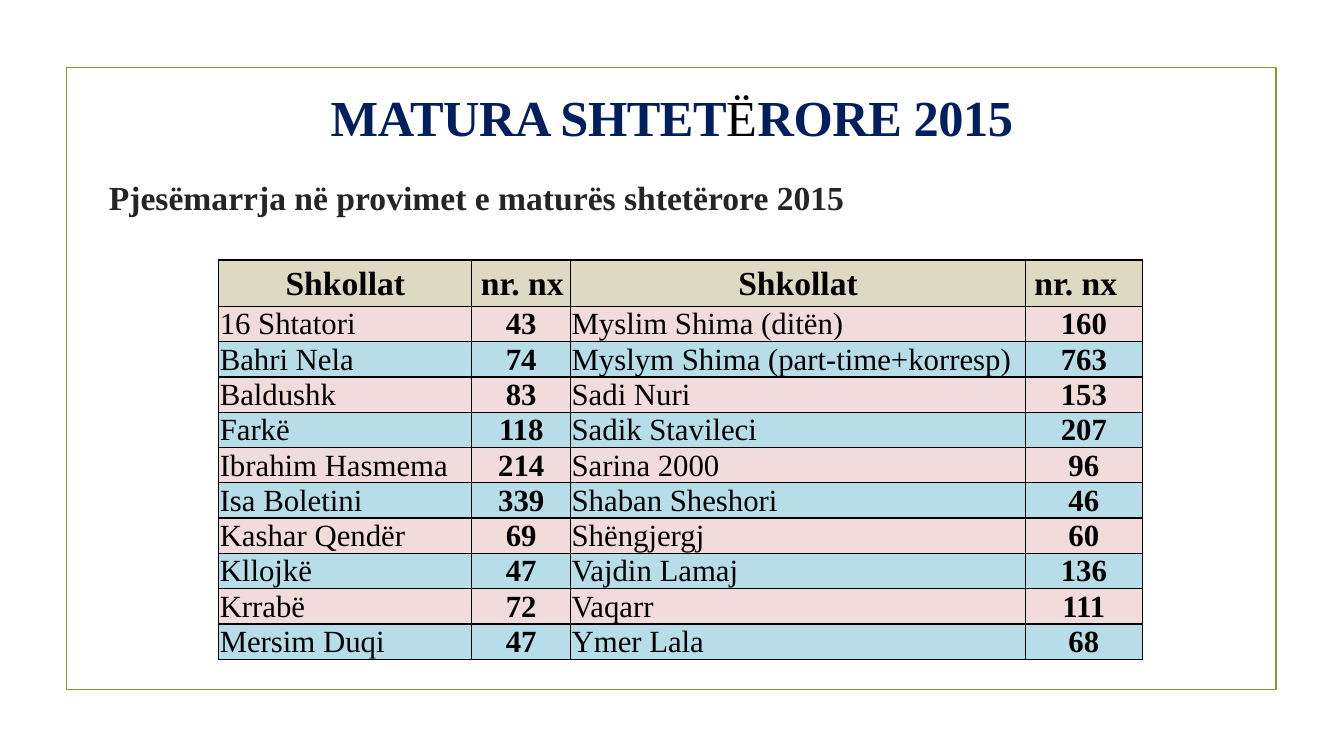
from lxml import etree
from pptx import Presentation
from pptx.dml.color import RGBColor
from pptx.enum.shapes import MSO_SHAPE
from pptx.enum.text import MSO_ANCHOR, MSO_AUTO_SIZE, PP_ALIGN
from pptx.oxml.ns import qn
from pptx.util import Inches, Pt

LEFT, CENTER = PP_ALIGN.LEFT, PP_ALIGN.CENTER
TOP, MIDDLE = MSO_ANCHOR.TOP, MSO_ANCHOR.MIDDLE
NO_AUTOFIT = MSO_AUTO_SIZE.NONE
RECTANGLE = MSO_SHAPE.RECTANGLE

FONT = "Times New Roman"
NAVY, BLACK, CHARCOAL, OLIVE = "001F5F", "000000", "252525", "83992A"
HEADER_FILL, BAND_FILLS = "DDD9C3", ("F2DCDB", "B7DEE8")

COLUMN_WIDTHS = (2.51, 0.98, 4.51, 1.16)
HEADER_HEIGHT, ROW_HEIGHT = 0.46, 0.35
HEADERS = ("Shkollat", "nr. nx") * 2
SCHOOLS = (
    ("16 Shtatori", 43, "Myslim Shima (ditën)", 160),
    ("Bahri Nela", 74, "Myslym Shima (part-time+korresp)", 763),
    ("Baldushk", 83, "Sadi Nuri", 153),
    ("Farkë", 118, "Sadik Stavileci", 207),
    ("Ibrahim Hasmema", 214, "Sarina 2000", 96),
    ("Isa Boletini", 339, "Shaban Sheshori", 46),
    ("Kashar Qendër", 69, "Shëngjergj", 60),
    ("Kllojkë", 47, "Vajdin Lamaj", 136),
    ("Krrabë", 72, "Vaqarr", 111),
    ("Mersim Duqi", 47, "Ymer Lala", 68),
)


def rgb(value):
    return RGBColor.from_string(value)


def format_run(r, size, color, bold):
    r.font.name = FONT
    r.font.size = Pt(size)
    r.font.bold = bold
    r.font.color.rgb = rgb(color)


def add_frame(s):
    sp = s.shapes.add_shape(RECTANGLE, Inches(0.66), Inches(0.67), Inches(12), Inches(6.17))
    sp.shadow.inherit = False
    sp.fill.background()
    sp.line.color.rgb = rgb(OLIVE)
    sp.line.width = Pt(1.25)


def fill_placeholder(sp, box, runs, size, align, wrap):
    """Place a placeholder and write runs of (text, colour, bold, letter spacing)."""
    sp.left, sp.top, sp.width, sp.height = map(Inches, box)
    tf = sp.text_frame
    tf.margin_left = tf.margin_top = tf.margin_right = tf.margin_bottom = 0
    tf.auto_size = NO_AUTOFIT
    tf.word_wrap = wrap
    tf.vertical_anchor = TOP
    p = tf.paragraphs[0]
    p.alignment = align
    p.space_before = Pt(0)
    for text, color, bold, spacing in runs:
        r = p.add_run()
        r.text = text
        format_run(r, size, color, bold)
        r.font._element.set("spc", str(round(spacing * 100)))


def set_borders(cell):
    tcPr = cell._tc.get_or_add_tcPr()
    for position, side in enumerate(("a:lnL", "a:lnR", "a:lnT", "a:lnB")):
        ln = etree.Element(qn(side), w=str(Pt(1)))
        fill = etree.SubElement(ln, qn("a:solidFill"))
        etree.SubElement(fill, qn("a:srgbClr"), val=BLACK)
        tcPr.insert(position, ln)


def format_cell(cell, text, fill, size, bold, align, indent=0.01):
    cell.fill.solid()
    cell.fill.fore_color.rgb = rgb(fill)
    set_borders(cell)
    cell.vertical_anchor = MIDDLE
    cell.margin_left = Inches(indent)
    cell.margin_right = cell.margin_top = Inches(0.01)
    cell.margin_bottom = 0
    p = cell.text_frame.paragraphs[0]
    p.text = text
    p.alignment = align
    format_run(p.runs[0], size, BLACK, bold)


def add_school_table(s):
    height = HEADER_HEIGHT + ROW_HEIGHT * len(SCHOOLS)
    table = s.shapes.add_table(
        len(SCHOOLS) + 1, len(HEADERS), Inches(2.17), Inches(2.58),
        Inches(sum(COLUMN_WIDTHS)), Inches(height)).table
    table.horz_banding = False
    for column, width in zip(table.columns, COLUMN_WIDTHS):
        column.width = Inches(width)
    for i, row in enumerate(table.rows):
        row.height = Inches(ROW_HEIGHT if i else HEADER_HEIGHT)

    for j, text in enumerate(HEADERS):
        is_count = j % 2 == 1
        format_cell(table.cell(0, j), text, HEADER_FILL, 24, True,
                    LEFT if is_count else CENTER, 0.09 if is_count else 0.01)
    for i, values in enumerate(SCHOOLS):
        for j, value in enumerate(values):
            is_count = j % 2 == 1
            format_cell(table.cell(i + 1, j), str(value), BAND_FILLS[i % 2], 22,
                        is_count, CENTER if is_count else LEFT)


def main():
    prs = Presentation()
    prs.slide_width, prs.slide_height = Inches(13.33), Inches(7.5)
    s = prs.slides.add_slide(prs.slide_layouts[0])
    add_frame(s)
    fill_placeholder(
        s.shapes.title, (3.22, 0.85, 6.89, 0.61),
        (("MATURA SHTET", NAVY, True, -0.3), ("Ë", BLACK, False, 0),
         ("RORE 2015", NAVY, True, -0.3)), 36, CENTER, False)
    fill_placeholder(
        s.placeholders[1], (1.08, 1.75, 11.25, 0.4),
        (("Pjesëmarrja në provimet e maturës shtetërore 2015", CHARCOAL, True, 0),),
        24, LEFT, True)
    add_school_table(s)
    prs.save("out.pptx")


if __name__ == "__main__":
    main()
